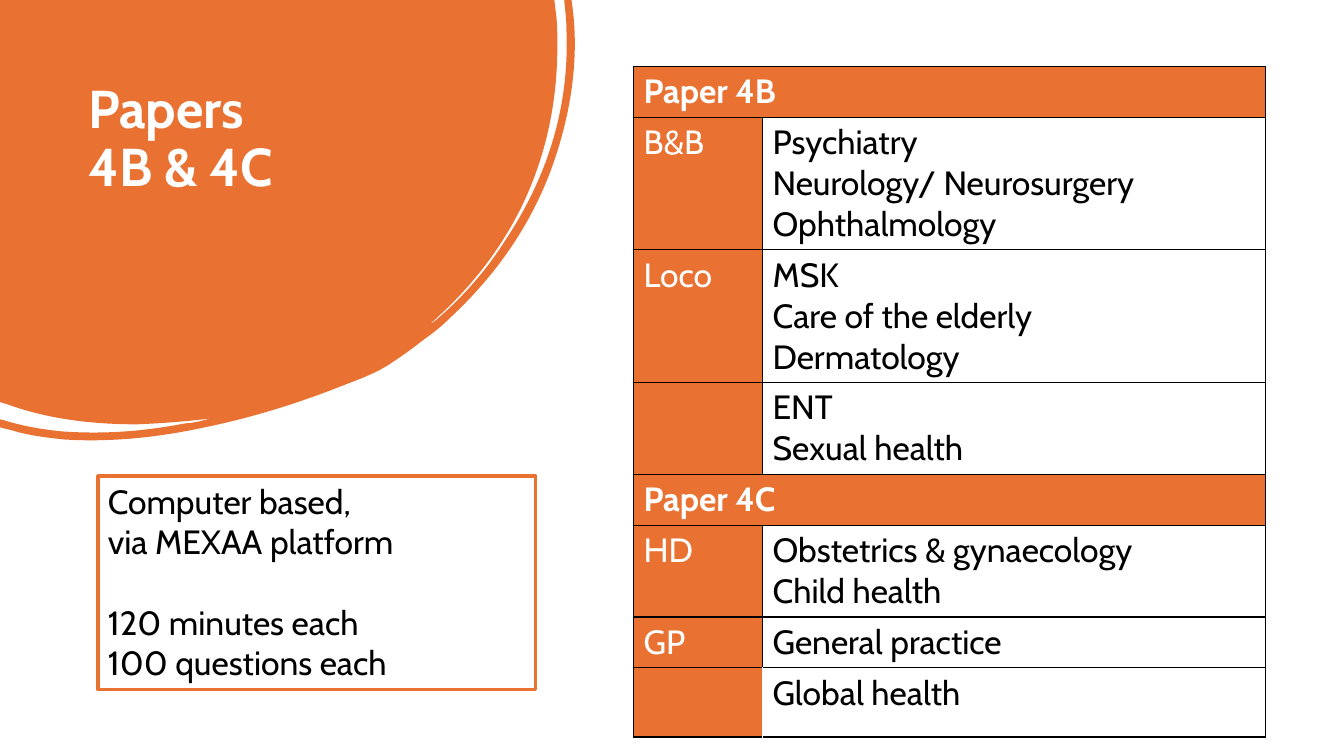
from lxml import etree
from pptx import Presentation
from pptx.dml.color import RGBColor as RGB
from pptx.enum.shapes import MSO_SHAPE as Shape
from pptx.enum.text import MSO_ANCHOR as Anchor, PP_ALIGN as Align
from pptx.oxml.ns import qn
from pptx.util import Pt

FONT = "Cabin"
COLORS = {"accent": "E97132", "light": "FFFFFF", "dark": "000000"}

# Blob outline in hundredths of an inch: pairs are lines, sextets are curves.
BLOB = [
    (0, 0), (550, 0), (552, 17),
    (553, 26, 553, 36, 553, 45), (553, 101, 542, 154, 518, 204),
    (496, 249, 465, 288, 427, 321), (429, 321, 430, 319, 432, 318),
    (459, 295, 482, 269, 501, 239), (543, 176, 565, 107, 562, 30),
    (562, 21, 561, 12, 560, 3), (560, 0), (567, 0), (568, 7),
    (574, 54, 568, 102, 553, 150), (533, 214, 497, 268, 448, 314),
    (439, 323, 429, 331, 419, 338), (409, 346, 399, 353, 387, 361),
    (375, 369, 360, 375, 344, 381), (299, 399, 252, 414, 203, 424),
    (157, 434, 110, 439, 63, 436), (45, 434, 28, 432, 12, 427),
    (0, 424), (0, 416), (4, 417),
    (23, 423, 42, 426, 61, 428), (103, 431, 143, 428, 184, 420),
    (189, 420, 193, 419, 198, 418), (202, 417, 206, 416, 210, 415),
    (186, 418, 161, 420, 136, 421), (92, 421, 48, 416, 7, 401), (0, 399),
]

# Each row: height, label, subjects (None for a heading across both columns).
ROWS = [
    (36.4, "Paper 4B", None),
    (94.6, "B&B", "Psychiatry\nNeurology/ Neurosurgery\nOphthalmology"),
    (94.6, "Loco", "MSK\nCare of the elderly\nDermatology"),
    (65.6, "", "ENT\nSexual health"),
    (36.4, "Paper 4C", None),
    (65.6, "HD", "Obstetrics & gynaecology\nChild health"),
    (36.4, "GP", "General practice"),
    (49.4, "", "Global health"),
]


def color(name):
    return RGB.from_string(COLORS[name])


def write(frame, text, size, ink, bold=False):
    frame.word_wrap = True
    frame.text = text
    for para in frame.paragraphs:
        para.alignment = Align.LEFT
        for run in para.runs:
            font = run.font
            font.name, font.size, font.bold = FONT, Pt(size), bold
            font.color.rgb = color(ink)


def bend(shape, parts):
    """Join each run of three lines that stands for a sextet into one curve."""
    lines = iter(list(shape._element.iter(qn("a:lnTo"))))
    for part in parts:
        first = next(lines)
        if len(part) == 6:
            first.tag = qn("a:cubicBezTo")
            curve = etree.Element(qn("a:cubicBezTo"))
            first.getparent().replace(first, curve)
            for line in (first, next(lines), next(lines)):
                curve.append(line[0])
                if line is not first:
                    line.getparent().remove(line)


def add_blob(slide, left, top, width, height):
    unit = width / 571
    points = [(Pt(left + part[i] * unit), Pt(top + part[i + 1] * unit))
              for part in BLOB for i in range(0, len(part), 2)]
    pen = slide.shapes.build_freeform(*points[0])
    pen.add_line_segments(points[1:], close=True)
    blob = pen.convert_to_shape()
    bend(blob, BLOB[1:])
    blob.width, blob.height = Pt(width), Pt(height)
    for outline in blob._element.iter(qn("a:path")):
        outline.set("w", str(Pt(width)))
        outline.set("h", str(Pt(height)))
    blob.shadow.inherit = False
    blob.fill.solid()
    blob.fill.fore_color.rgb = color("accent")
    blob.line.fill.background()


def add_title(slide, left, top, width, height):
    box = slide.shapes.add_textbox(Pt(left), Pt(top), Pt(width), Pt(height))
    write(box.text_frame, "Papers\v4B & 4C", 38, "light", True)
    box.text_frame.paragraphs[0].line_spacing = 0.9


def add_notice(slide, left, top, width, height):
    box = slide.shapes.add_shape(Shape.RECTANGLE, Pt(left), Pt(top), Pt(width), Pt(height))
    box.shadow.inherit = False
    box.fill.background()
    box.line.color.rgb = color("accent")
    box.line.width = Pt(2.5)
    frame = box.text_frame
    frame.vertical_anchor = Anchor.TOP
    write(frame, "Computer based,\vvia MEXAA platform\n"
          "120 minutes each\n100 questions each", 24, "dark")
    frame.paragraphs[1].space_before = Pt(28.8)


def set_border(cell, **inks):
    """Draw the four cell edges, black unless a side (L, R, T, B) is named."""
    props = cell._tc.get_or_add_tcPr()
    for spot, side in enumerate("LRTB"):
        line = etree.Element(qn("a:ln" + side), w=str(Pt(1)))
        fill = etree.SubElement(line, qn("a:solidFill"))
        etree.SubElement(fill, qn("a:srgbClr"), val=COLORS[inks.get(side, "dark")])
        props.insert(spot, line)


def add_papers(slide, left, top, widths):
    height = sum(row[0] for row in ROWS)
    table = slide.shapes.add_table(len(ROWS), 2, Pt(left), Pt(top),
                                   Pt(sum(widths)), Pt(height)).table
    table.first_row = table.horz_banding = False
    for column, width in zip(table.columns, widths):
        column.width = Pt(width)
    for index, (height, label, subjects) in enumerate(ROWS):
        table.rows[index].height = Pt(height)
        head, body = table.cell(index, 0), table.cell(index, 1)
        heading = subjects is None
        head.fill.solid()
        head.fill.fore_color.rgb = color("accent")
        body.fill.background()
        write(head.text_frame, label, 24, "light", heading)
        if heading:
            head.merge(body)
        else:
            write(body.text_frame, subjects, 24, "dark")
        last = index == len(ROWS) - 1
        seam = "light" if last else "dark"
        set_border(head, R=seam)
        set_border(body, L=seam)


def main():
    deck = Presentation()
    deck.slide_width, deck.slide_height = Pt(960), Pt(540)
    slide = deck.slides.add_slide(deck.slide_layouts[6])
    add_blob(slide, 0, 0, 411.12, 314.64)
    add_title(slide, 56, 55.5, 253.5, 157)
    add_papers(slide, 452.5, 47.5, (92.2, 359.3))
    add_notice(slide, 70, 340, 312.5, 152.5)
    deck.save("out.pptx")


if __name__ == "__main__":
    main()
